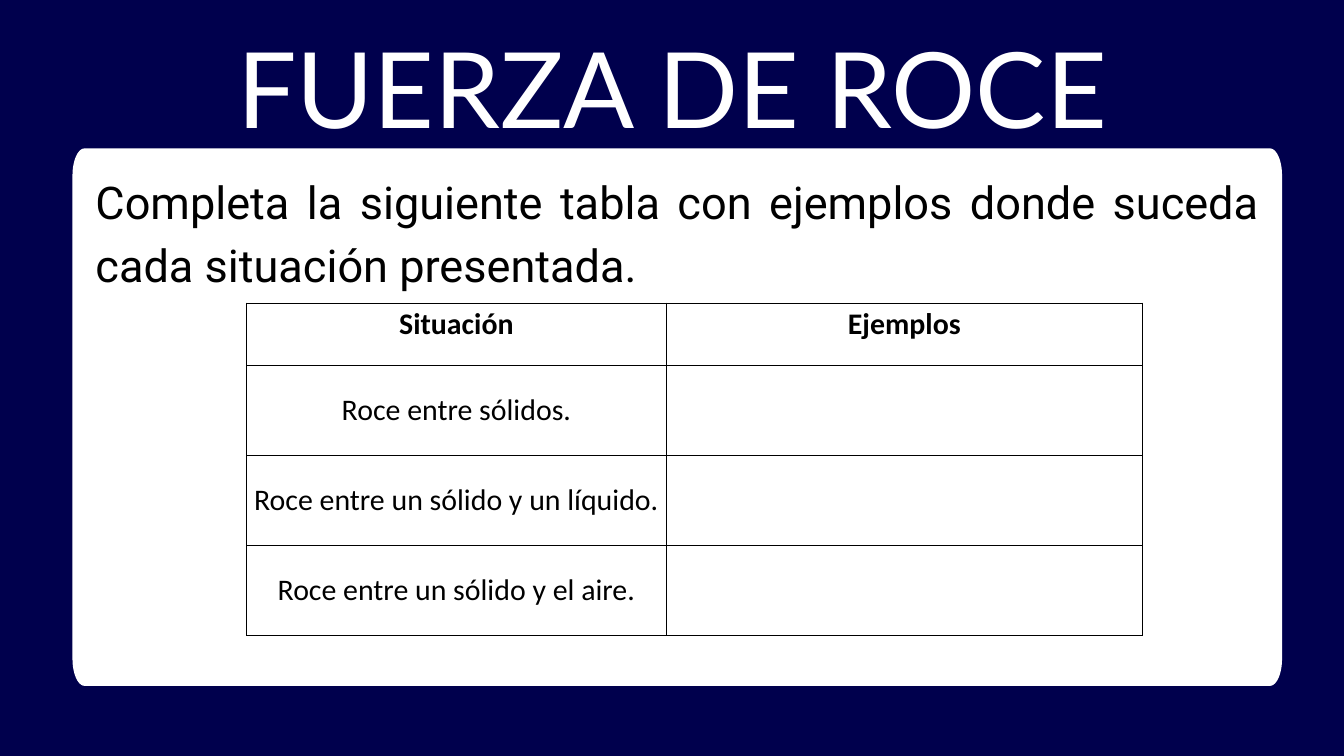
from dataclasses import dataclass
from math import cos, pi, sin

from lxml.etree import SubElement
from pptx import Presentation
from pptx.dml.color import RGBColor as RGB
from pptx.enum.text import MSO_ANCHOR as Anchor, MSO_AUTO_SIZE as AutoSize, PP_ALIGN as Align
from pptx.oxml.ns import qn
from pptx.util import Cm, Pt


@dataclass(frozen=True)
class Theme:
    navy: RGB = RGB(0x00, 0x00, 0x4D)
    white: RGB = RGB(0xFF, 0xFF, 0xFF)
    black: RGB = RGB(0x00, 0x00, 0x00)
    title_font: str = "Lato"
    body_font: str = "Roboto"
    table_font: str = "Calibri"
    title_size: float = 112.8
    body_size: float = 48.3
    table_size: float = 32
    border_width: float = 1


THEME = Theme()

ROWS = [
    ("Situación", "Ejemplos"),
    ("Roce entre sólidos.", ""),
    ("Roce entre un sólido y un líquido.", ""),
    ("Roce entre un sólido y el aire.", ""),
]
COLUMN_WIDTHS = (15.87, 17.99)
HEADER_HEIGHT, ROW_HEIGHT = 2.36, 3.4


def style_paragraph(p, align, font, size, color, bold=False):
    p.alignment = align
    for r in p.runs:
        r.font.name = font
        r.font.size = Pt(size)
        r.font.bold = bold
        r.font.color.rgb = color


def add_panel(slide, left, top, width, height, rx, ry):
    """Draw a white panel whose corners are quarter ellipses of radii rx and ry."""
    steps = 10
    right, bottom = left + width, top + height
    centres = [
        (right - rx, bottom - ry),
        (left + rx, bottom - ry),
        (left + rx, top + ry),
        (right - rx, top + ry),
    ]
    points = []
    for quarter, (cx, cy) in enumerate(centres):
        for step in range(steps + 1):
            angle = (quarter + step / steps) * pi / 2
            points.append((Cm(cx + rx * cos(angle)), Cm(cy + ry * sin(angle))))
    builder = slide.shapes.build_freeform(*points[0])
    builder.add_line_segments(points[1:], close=True)
    sp = builder.convert_to_shape()
    sp.shadow.inherit = False
    sp.fill.solid()
    sp.fill.fore_color.rgb = THEME.white
    sp.line.fill.background()


def add_text(slide, text, box, align, font, size, color, spacing):
    tf = slide.shapes.add_textbox(*map(Cm, box)).text_frame
    tf.word_wrap = True
    tf.auto_size = AutoSize.SHAPE_TO_FIT_TEXT
    tf.margin_left = tf.margin_top = tf.margin_right = tf.margin_bottom = 0
    tf.text = text
    p = tf.paragraphs[0]
    p.line_spacing = Pt(spacing)
    style_paragraph(p, align, font, size, color)


def set_borders(cell):
    tc_pr = cell._tc.get_or_add_tcPr()
    for side in ("lnL", "lnR", "lnT", "lnB"):
        ln = SubElement(tc_pr, qn(f"a:{side}"), w=str(Pt(THEME.border_width)))
        fill = SubElement(ln, qn("a:solidFill"))
        SubElement(fill, qn("a:srgbClr"), val=str(THEME.black))


def add_situation_table(slide, left, top):
    heights = [HEADER_HEIGHT] + [ROW_HEIGHT] * (len(ROWS) - 1)
    table = slide.shapes.add_table(
        len(ROWS), len(COLUMN_WIDTHS),
        Cm(left), Cm(top), Cm(sum(COLUMN_WIDTHS)), Cm(sum(heights)),
    ).table
    table.first_row = table.horz_banding = False
    for column, width in zip(table.columns, COLUMN_WIDTHS):
        column.width = Cm(width)
    for i, (row, height, texts) in enumerate(zip(table.rows, heights, ROWS)):
        row.height = Cm(height)
        for cell, text in zip(row.cells, texts):
            set_borders(cell)
            cell.fill.background()
            cell.vertical_anchor = Anchor.MIDDLE if i else Anchor.TOP
            cell.text_frame.text = text
            style_paragraph(cell.text_frame.paragraphs[0], Align.CENTER, THEME.table_font,
                            THEME.table_size, THEME.black, bold=i == 0)


def main():
    prs = Presentation()
    prs.slide_width, prs.slide_height = Cm(50.8), Cm(28.58)
    slide = prs.slides.add_slide(prs.slide_layouts[6])
    slide.background.fill.solid()
    slide.background.fill.fore_color.rgb = THEME.navy

    add_panel(slide, 2.74, 5.61, 45.72, 20.32, rx=0.46, ry=1.02)
    add_text(slide, "Completa la siguiente tabla con ejemplos donde suceda cada situación presentada.",
             (3.61, 6.25, 44.02, 4.85), Align.JUSTIFY,
             THEME.body_font, THEME.body_size, THEME.black, spacing=67.7)
    add_text(slide, "FUERZA DE ROCE", (1.75, 0.08, 47.32, 5.03), Align.CENTER,
             THEME.title_font, THEME.title_size, THEME.white, spacing=157.9)
    add_situation_table(slide, 9.32, 11.46)

    prs.save("out.pptx")


if __name__ == "__main__":
    main()
